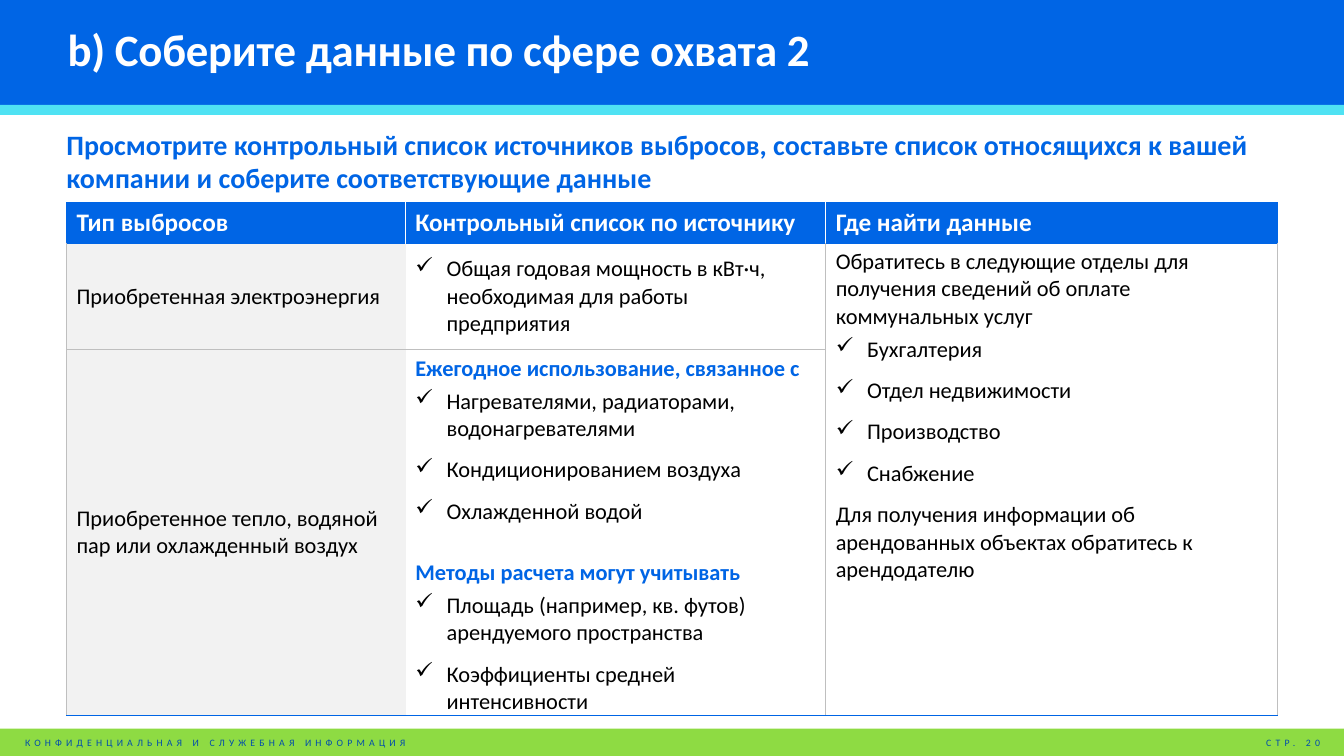
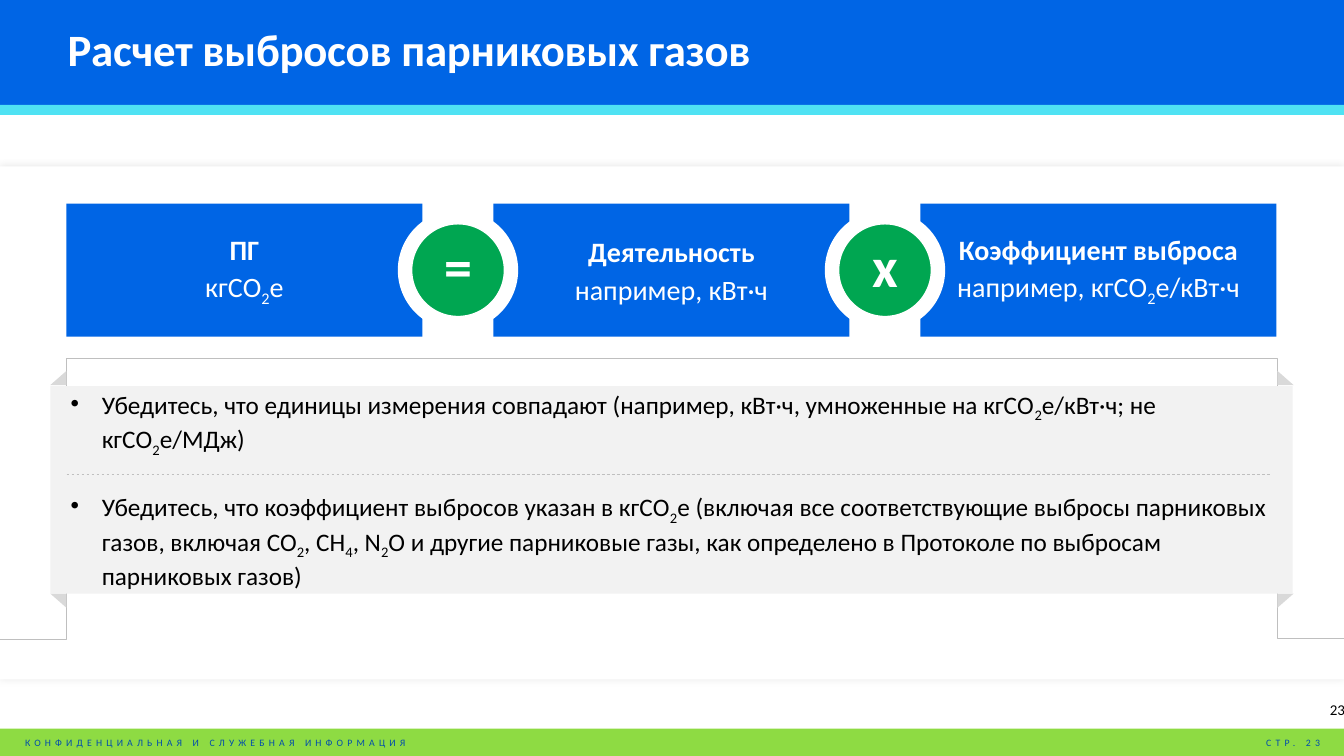
"""Build two slides on collecting data and working out greenhouse gas emissions."""
from lxml.etree import SubElement
from pptx import Presentation
from pptx.dml.color import RGBColor
from pptx.enum.dml import MSO_LINE
from pptx.enum.shapes import MSO_CONNECTOR, MSO_SHAPE
from pptx.enum.text import MSO_ANCHOR, PP_ALIGN
from pptx.oxml.ns import qn
from pptx.util import Inches, Pt

HUES = {
    "blue": "0065E5", "navy": "004CAC", "cyan": "4FE2F3", "lime": "8EDB43",
    "green": "00A651", "white": "FFFFFF", "black": "000000",
    "pale": "F2F2F2", "fold": "D9D9D9", "line": "BFBFBF",
}
FONT = "Calibri"
WIDE, TALL = 13.33, 7.5
LEFT, SPAN = 0.66, 12

BANDS = [(0, 1.04, "blue"), (7.23, 0.27, "lime"), (1.04, 0.1, "cyan")]
NOTICE = "КОНФИДЕНЦИАЛЬНАЯ И СЛУЖЕБНАЯ ИНФОРМАЦИЯ"

STYLES = {
    "title": {"size": 32, "bold": True, "hue": "white", "track": -20, "para": {"line_spacing": 0.85}},
    "lead": {"size": 20, "bold": True, "hue": "blue"},
    "foot": {"size": 7, "hue": "navy", "track": 300},
    "page": {"size": 7, "hue": "navy", "track": 300, "para": {"alignment": PP_ALIGN.RIGHT}},
    "number": {"size": 10.7, "hue": "black", "para": {"alignment": PP_ALIGN.RIGHT}},
    "head": {"size": 18, "bold": True, "hue": "white"},
    "body": {"size": 16, "hue": "black"},
    "close": {"size": 16, "hue": "black", "para": {"space_before": Pt(4), "space_after": Pt(6)}},
    "sub": {"size": 16, "bold": True, "hue": "blue"},
    "next": {"size": 16, "bold": True, "hue": "blue", "para": {"space_before": Pt(18)}},
    "check": {"size": 16, "hue": "black", "mark": "✓",
              "para": {"space_before": Pt(4), "space_after": Pt(6)}},
    "dot": {"size": 18, "hue": "black", "mark": "•"},
    "apart": {"size": 18, "hue": "black", "mark": "•", "para": {"space_before": Pt(24)}},
    "term": {"size": 20, "bold": True, "hue": "white",
             "para": {"alignment": PP_ALIGN.CENTER, "space_after": Pt(3)}},
    "unit": {"size": 20, "hue": "white",
             "para": {"alignment": PP_ALIGN.CENTER, "space_after": Pt(3)}},
    "sign": {"size": 40, "bold": True, "hue": "white", "para": {"alignment": PP_ALIGN.CENTER}},
}

LEAD = ("Просмотрите контрольный список источников выбросов, составьте список "
        "относящихся к вашей компании и соберите соответствующие данные")
COLS, ROWS = [3.36, 4.17, 4.48], [0.4, 1.06, 3.51]
CELLS = [
    [[("head", "Тип выбросов")],
     [("head", "Контрольный список по источнику")],
     [("head", "Где найти данные")]],
    [[("body", "Приобретенная электроэнергия")],
     [("check", "Общая годовая мощность в кВт·ч, необходимая для работы предприятия")],
     [("body", "Обратитесь в следующие отделы для получения сведений об оплате коммунальных услуг"),
      ("check", "Бухгалтерия"),
      ("check", "Отдел недвижимости"),
      ("check", "Производство"),
      ("check", "Снабжение"),
      ("close", "Для получения информации об арендованных объектах обратитесь к арендодателю")]],
    [[("body", "Приобретенное тепло, водяной пар или охлажденный воздух")],
     [("sub", "Ежегодное использование, связанное с"),
      ("check", "Нагревателями, радиаторами, водонагревателями"),
      ("check", "Кондиционированием воздуха"),
      ("check", "Охлажденной водой"),
      ("next", "Методы расчета могут учитывать"),
      ("check", "Площадь (например, кв. футов) арендуемого пространства"),
      ("check", "Коэффициенты средней интенсивности")],
     []],
]
TOP_CELLS = {(1, 2), (2, 1)}
HEAD_SIDES = [("blue", 0.5), ("white", 1), ("white", 1), ("blue", 0.5)]
BODY_SIDES = [("line", 0.5), ("pale", 0.5), ("line", 0.5), ("line", 0.5)]
LEVELS = [("blue", 0.5), ("blue", 0.5), ("line", 0.5), ("blue", 1)]

TERMS = [
    ("ПГ", "кгСО|2|е"),
    ("Деятельность", "например, кВт·ч"),
    ("Коэффициент выброса", "например, кгСО|2|е/кВт·ч"),
]
SIGNS = ["=", "x"]
RULES = [
    ("dot", "Убедитесь, что единицы измерения совпадают (например, кВт·ч, умноженные на "
            "кгСО|2|е/кВт·ч; не кгСО|2|е/МДж)"),
    ("apart", "Убедитесь, что коэффициент выбросов указан в кгСО|2|е (включая все "
              "соответствующие выбросы парниковых газов, включая CO|2|, CH|4|, N|2|O и другие "
              "парниковые газы, как определено в Протоколе по выбросам парниковых газов)"),
]
FRAMES = [
    [(0.66, 6.18), (0.66, 3.56), (12.67, 3.56), (12.67, 6.18)],
    [(0, 6.34), (0.66, 6.34), (0.66, 3.85)],
    [(13.33, 6.33), (12.67, 6.33), (12.67, 3.84)],
]
FOLDS = [(0.5, 3.68, ["flipH"]), (12.67, 3.68, []),
         (0.5, 5.89, ["flipH", "flipV"]), (12.67, 5.89, ["flipV"])]


def tint(name):
    return RGBColor.from_string(HUES[name])


def apply(thing, vals):
    for key, val in vals.items():
        setattr(thing, key, val)


def write(frame, paras):
    """Fill a frame with styled paragraphs; text between bars is subscript."""
    for i, (name, text) in enumerate(paras):
        para = frame.add_paragraph() if i else frame.paragraphs[0]
        style = STYLES[name]
        apply(para, {"alignment": PP_ALIGN.LEFT, **style.get("para", {})})
        if i == 0:
            para.space_before = Pt(0)
        if i == len(paras) - 1:
            para.space_after = Pt(0)
        if "mark" in style:
            props = para._p.get_or_add_pPr()
            props.set("marL", str(Inches(0.31)))
            props.set("indent", str(-Inches(0.31)))
            SubElement(props, qn("a:buChar")).set("char", style["mark"])
        for j, part in enumerate(text.split("|")):
            run = para.add_run()
            run.text = part
            apply(run.font, {"name": FONT, "size": Pt(style["size"]),
                             "bold": style.get("bold", False)})
            run.font.color.rgb = tint(style["hue"])
            props = run._r.get_or_add_rPr()
            if "track" in style:
                props.set("spc", str(style["track"]))
            if j % 2:
                props.set("baseline", "-25000")


def setup(frame, paras, pads, anchor=MSO_ANCHOR.MIDDLE):
    sides = ("margin_left", "margin_top", "margin_right", "margin_bottom")
    apply(frame, {"word_wrap": True, "vertical_anchor": anchor,
                  **{side: Inches(pad) for side, pad in zip(sides, pads)}})
    write(frame, paras)


def label(slide, box, name, text, pads=(0, 0, 0, 0), anchor=MSO_ANCHOR.MIDDLE):
    shape = slide.shapes.add_textbox(*map(Inches, box))
    setup(shape.text_frame, [(name, text)], pads, anchor)


def block(slide, box, fill, kind=MSO_SHAPE.RECTANGLE, edge=None, paras=(),
          pads=(0.1, 0.05, 0.1, 0.05)):
    shape = slide.shapes.add_shape(kind, *map(Inches, box))
    shape.shadow.inherit = False
    shape.fill.solid()
    shape.fill.fore_color.rgb = tint(fill)
    if edge:
        shape.line.color.rgb = tint(edge)
        shape.line.width = Pt(1)
    else:
        shape.line.fill.background()
    if paras:
        setup(shape.text_frame, paras, pads)
    return shape


def start(deck, title, page):
    slide = deck.slides.add_slide(deck.slide_layouts[6])
    for top, high, fill in BANDS:
        block(slide, (0, top, WIDE, high), fill)
    pads = (0.1, 0.05, 0.1, 0.05)
    label(slide, (0.15, 7.26, 6.27, 0.22), "foot", NOTICE, pads, MSO_ANCHOR.TOP)
    label(slide, (12.1, 7.26, 1.09, 0.22), "page", f"СТР. {page}", pads, MSO_ANCHOR.TOP)
    label(slide, (0.67, 0.18, 11.98, 0.68), "title", title)
    return slide


def border(cell, sides):
    props = cell._tc.get_or_add_tcPr()
    for i, (tag, (hue, size)) in enumerate(zip(("lnL", "lnR", "lnT", "lnB"), sides)):
        line = SubElement(props, qn(f"a:{tag}"))
        line.set("w", str(Pt(size)))
        fill = SubElement(line, qn("a:solidFill"))
        SubElement(fill, qn("a:srgbClr")).set("val", HUES[hue])
        props.remove(line)
        props.insert(i, line)


def grid(slide):
    frame = slide.shapes.add_table(len(ROWS), len(COLS), Inches(LEFT), Inches(2.01),
                                   Inches(sum(COLS)), Inches(sum(ROWS)))
    table = frame.table
    apply(table, {"first_row": False, "horz_banding": False})
    for col, wide in zip(table.columns, COLS):
        col.width = Inches(wide)
    for row, high in zip(table.rows, ROWS):
        row.height = Inches(high)
    table.cell(1, 2).merge(table.cell(2, 2))
    for r, row in enumerate(CELLS):
        sides = BODY_SIDES if r else HEAD_SIDES
        for c, paras in enumerate(row):
            cell = table.cell(r, c)
            if cell.is_spanned:
                continue
            cell.fill.solid()
            cell.fill.fore_color.rgb = tint("blue" if r == 0 else "white" if c else "pale")
            cell.vertical_anchor = MSO_ANCHOR.TOP if (r, c) in TOP_CELLS else MSO_ANCHOR.MIDDLE
            write(cell.text_frame, paras)
            border(cell, (sides[c], sides[c + 1], LEVELS[r], LEVELS[r + cell.span_height]))


def panel(slide):
    shape = block(slide, (0, 1.65, WIDE, 5.09), "white")
    glow = SubElement(shape._element.spPr.find(qn("a:effectLst")), qn("a:outerShdw"))
    for key, val in {"blurRad": Pt(5), "dist": 0, "dir": 0}.items():
        glow.set(key, str(val))
    shade = SubElement(glow, qn("a:srgbClr"))
    shade.set("val", HUES["line"])
    SubElement(shade, qn("a:alpha")).set("val", "40000")


def formula(slide):
    wide, high, top = 3.53, 1.32, 2.02
    gap = (SPAN - wide * len(TERMS)) / (len(TERMS) - 1)
    for i, (term, unit) in enumerate(TERMS):
        block(slide, (LEFT + i * (wide + gap), top, wide, high), "blue",
              paras=[("term", term), ("unit", unit)])
    for i, sign in enumerate(SIGNS):
        mid = LEFT + (i + 1) * (wide + gap) - gap / 2
        for size, fill, paras in ((1.18, "white", []), (0.92, "green", [("sign", sign)])):
            box = (mid - size / 2, top + (high - size) / 2, size, size)
            block(slide, box, fill, MSO_SHAPE.OVAL, "white", paras, (0.1, 0, 0.1, 0.1))


def ribbon(slide):
    for first, *rest in FRAMES:
        pen = slide.shapes.build_freeform(*map(Inches, first))
        pen.add_line_segments([tuple(map(Inches, spot)) for spot in rest], close=False)
        shape = pen.convert_to_shape()
        shape.shadow.inherit = False
        shape.fill.background()
        shape.line.color.rgb = tint("line")
        shape.line.width = Pt(0.5)
    for left, top, flips in FOLDS:
        fold = block(slide, (left, top, 0.16, 0.14), "fold", MSO_SHAPE.ISOSCELES_TRIANGLE)
        fold.adjustments[0] = 0
        for flip in flips:
            fold._element.spPr.xfrm.set(flip, "1")
    block(slide, (0.5, 3.83, 12.32, 2.06), "pale", paras=RULES, pads=(0.2, 0.1, 0.2, 0.1))
    rule = slide.shapes.add_connector(MSO_CONNECTOR.STRAIGHT, *map(Inches, (LEFT, 4.71, 12.6, 4.71)))
    rule.line.color.rgb = tint("line")
    apply(rule.line, {"width": Pt(0.5), "dash_style": MSO_LINE.DASH})
    SubElement(rule._element.spPr, qn("a:effectLst"))


def main():
    deck = Presentation()
    apply(deck, {"slide_width": Inches(WIDE), "slide_height": Inches(TALL)})
    slide = start(deck, "b) Соберите данные по сфере охвата 2", 20)
    grid(slide)
    label(slide, (LEFT, 1.27, SPAN, 0.65), "lead", LEAD)
    slide = start(deck, "Расчет выбросов парниковых газов", 23)
    panel(slide)
    label(slide, (12.69, 6.95, 0.65, 0.17), "number", "23")
    formula(slide)
    ribbon(slide)
    deck.save("out.pptx")


if __name__ == "__main__":
    main()
